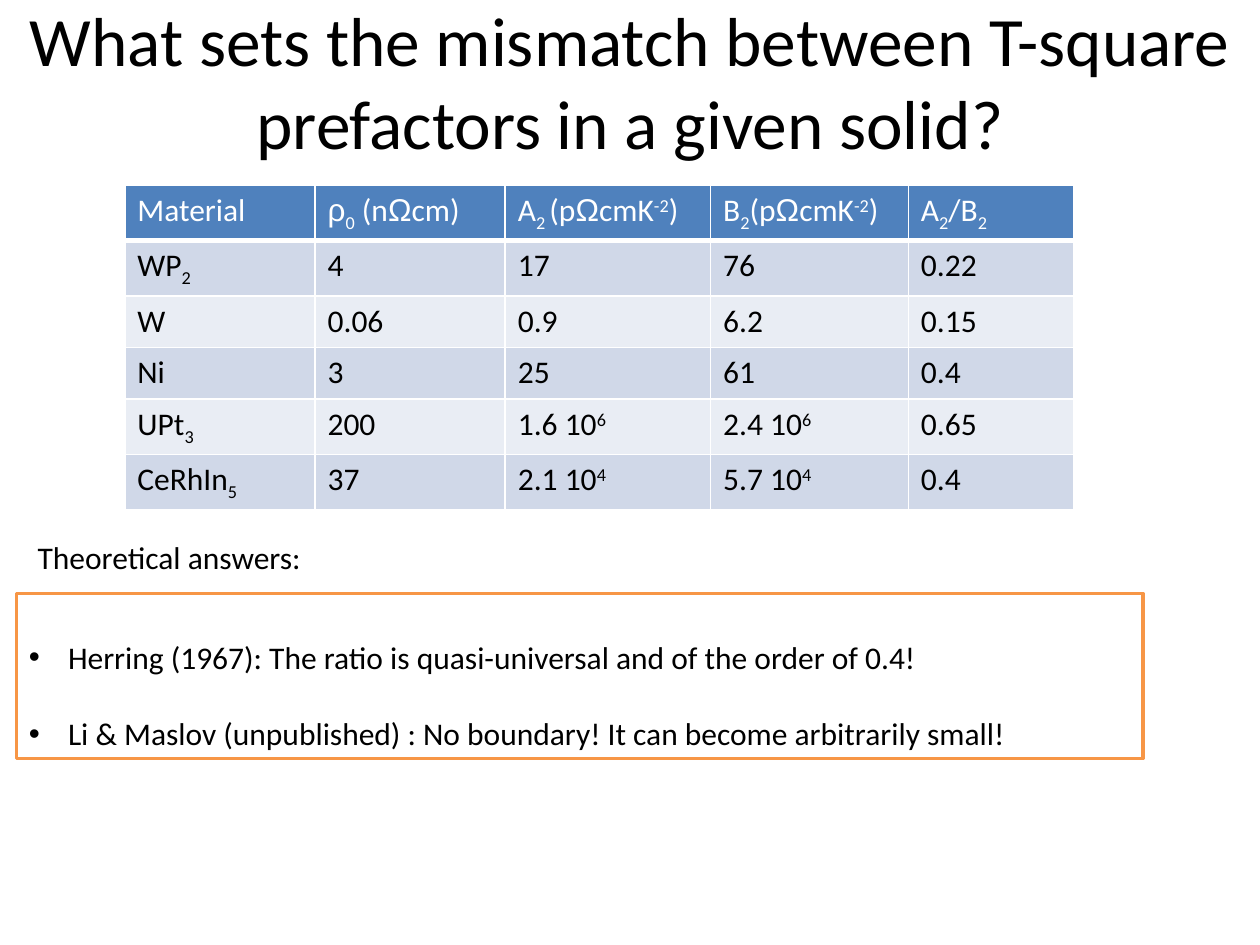
import pptx
import pptx.dml.color
import pptx.enum.text
import pptx.oxml
import pptx.oxml.ns
import pptx.util
from pptx.util import Inches

COLORS = {
    "text": "000000",
    "white": "FFFFFF",
    "header": "4F81BD",
    "band_dark": "D0D8E8",
    "band_light": "E9EDF4",
    "frame": "F79646",
}
BASELINES = {"_": "-25000", "^": "30000"}
GREEK = ("ρ", "Ω")
COLUMN_WIDTHS = (1.51, 1.51, 1.63, 1.57, 1.31)
ROW_HEIGHT = 0.41
MATERIALS = (
    ("Material", "ρ|_0| (n|Ω|cm)", "A|_2 |(p|Ω|cmK|^-2|)", "B|_2|(p|Ω|cmK|^-2|)", "A|_2|/B|_2"),
    ("WP|_2", "4", "17", "76", "0.22"),
    ("W", "0.06", "0.9", "6.2", "0.15"),
    ("Ni", "3", "25", "61", "0.4"),
    ("UPt|_3", "200", "1.6 10|^6", "2.4 10|^6", "0.65"),
    ("CeRhIn|_5", "37", "2.1 10|^4", "5.7 10|^4", "0.4"),
)
ANSWERS = (
    "Herring (1967): The ratio is quasi-universal and of the order of 0.4!",
    "Li & Maslov (unpublished) : No boundary! It can become arbitrarily small!",
)


class SlideWriter:
    font_name = "Calibri"
    body_size = 18
    title_size = 39.6

    def __init__(self, slide):
        self.slide = slide

    def color(self, name):
        return pptx.dml.color.RGBColor.from_string(COLORS[name])

    def fill(self, target, name):
        target.fill.solid()
        target.fill.fore_color.rgb = self.color(name)

    def place(self, shape, left, top, width, height):
        shape.left, shape.top = Inches(left), Inches(top)
        shape.width, shape.height = Inches(width), Inches(height)

    def style(self, para, size=body_size, color="text"):
        para.font.name = self.font_name
        para.font.size = pptx.util.Pt(size)
        para.font.bold = False
        para.font.color.rgb = self.color(color)

    def title(self, text, *bounds):
        title = self.slide.shapes.title
        self.place(title, *bounds)
        frame = title.text_frame
        frame.text = text
        frame.vertical_anchor = pptx.enum.text.MSO_ANCHOR.MIDDLE
        para = frame.paragraphs[0]
        para.alignment = pptx.enum.text.PP_ALIGN.CENTER
        self.style(para, self.title_size)

    def label(self, text, *bounds):
        box = self.slide.shapes.add_textbox(*map(Inches, bounds))
        box.text_frame.text = text
        self.style(box.text_frame.paragraphs[0])

    def framed_list(self, items, *bounds):
        body = self.slide.placeholders[1]
        self.place(body, *bounds)
        self.fill(body, "white")
        body.line.color.rgb = self.color("frame")
        body.line.width = pptx.util.Pt(2)
        frame = body.text_frame
        frame.text = "\n".join(items)
        frame.auto_size = pptx.enum.text.MSO_AUTO_SIZE.NONE
        frame.vertical_anchor = pptx.enum.text.MSO_ANCHOR.BOTTOM
        for index, para in enumerate(frame.paragraphs):
            self.style(para)
            para.space_before = pptx.util.Pt(22 if index else 0)
            properties = para._p.get_or_add_pPr()
            properties.set("marL", str(Inches(0.31)))
            properties.set("indent", str(-Inches(0.31)))

    def scripted_text(self, para, markup):
        for part in markup.split("|"):
            span = para.add_run()
            span.text = part.lstrip("_^")
            if part in GREEK:
                span.font.name = "Arial"
            if part[0] in BASELINES:
                span.font._element.set("baseline", BASELINES[part[0]])

    def borders(self, cell, bottom_width):
        properties = cell._tc.get_or_add_tcPr()
        widths = (("lnL", 1), ("lnR", 1), ("lnT", 1), ("lnB", bottom_width))
        for index, (side, width) in enumerate(widths):
            properties.insert(index, pptx.oxml.parse_xml(
                f'<a:{side} {pptx.oxml.ns.nsdecls("a")} w="{pptx.util.Pt(width)}">'
                f'<a:solidFill><a:srgbClr val="{COLORS["white"]}"/></a:solidFill></a:{side}>'
            ))

    def table(self, rows, widths, left, top):
        bounds = (left, top, sum(widths), ROW_HEIGHT * len(rows))
        table = self.slide.shapes.add_table(len(rows), len(widths), *map(Inches, bounds)).table
        for column, width in zip(table.columns, widths):
            column.width = Inches(width)
        for row_index, row in enumerate(rows):
            is_header = row_index == 0
            band = "header" if is_header else ("band_light", "band_dark")[row_index % 2]
            table.rows[row_index].height = Inches(ROW_HEIGHT)
            for column_index, markup in enumerate(row):
                cell = table.cell(row_index, column_index)
                para = cell.text_frame.paragraphs[0]
                self.style(para, color="white" if is_header else "text")
                self.scripted_text(para, markup)
                self.fill(cell, band)
                self.borders(cell, 3 if is_header else 1)


def main():
    deck = pptx.Presentation()
    deck.slide_width, deck.slide_height = Inches(10), Inches(7.5)
    writer = SlideWriter(deck.slides.add_slide(deck.slide_layouts[1]))
    writer.title(
        "What sets the mismatch between T-square prefactors in a given solid?",
        0, 0.01, 10, 1.25,
    )
    writer.table(MATERIALS, COLUMN_WIDTHS, 0.99, 1.47)
    writer.framed_list(ANSWERS, 0.13, 4.71, 8.94, 1.31)
    writer.label("Theoretical answers:", 0.2, 4.22, 2.32, 0.4)
    deck.save("out.pptx")


if __name__ == "__main__":
    main()
